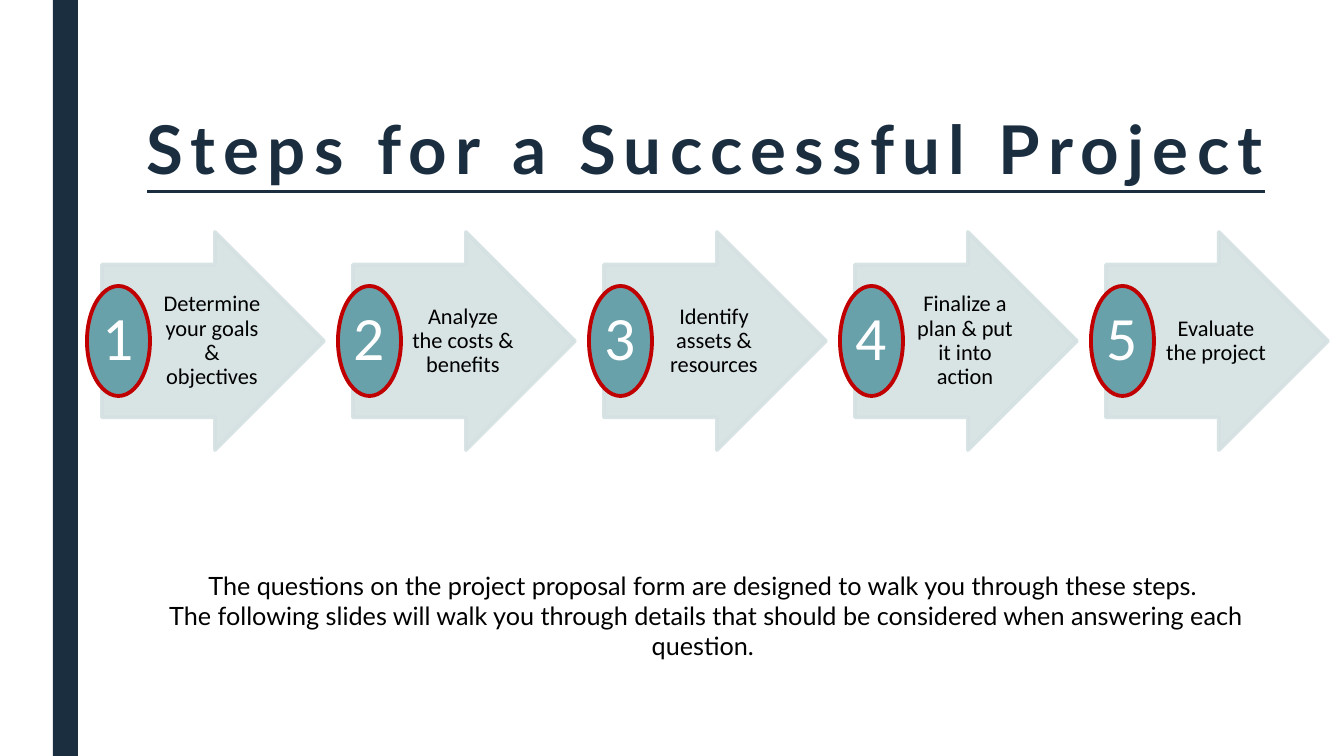
from pptx import Presentation
from pptx.dml.color import RGBColor
from pptx.enum.shapes import MSO_SHAPE
from pptx.enum.text import MSO_ANCHOR, PP_ALIGN
from pptx.oxml.ns import qn
from pptx.util import Emu, Pt
from lxml.etree import SubElement

PX = 914400 / 100.8
COLORS = {
    "navy": "1A2E40",
    "mist": "D4E0E2",
    "teal": "69A1AB",
    "red": "C00000",
    "black": "000000",
    "white": "FFFFFF",
}
STEPS = [
    "Determine your goals & objectives",
    "Analyze the costs & benefits",
    "Identify assets & resources",
    "Finalize a plan & put it into action",
    "Evaluate the project",
]
NOTES = [
    "The questions on the project proposal form are designed to walk you through these steps. ",
    "The following slides will walk you through details that should be considered "
    "when answering each question. ",
]
STEP_LEFT, STEP_PITCH = 102, 251


def px(n):
    return Emu(round(n * PX))


def rgb(name):
    return RGBColor.from_string(COLORS[name])


def set_alpha(fill_parent, percent):
    """Make the solid fill directly under an XML element partly transparent."""
    color = fill_parent.find(qn("a:solidFill"))[0]
    SubElement(color, qn("a:alpha"), val=str(percent * 1000))


def add_text(sp, lines, size, font="Calibri", color="black", bold=False, underline=False,
             spacing=None, line_spacing=None, anchor=MSO_ANCHOR.TOP, insets=(10, 5, 10, 5)):
    """Write centred paragraphs; insets are left, top, right, bottom in px."""
    tf = sp.text_frame
    tf.word_wrap = True
    tf.vertical_anchor = anchor
    tf.margin_left, tf.margin_top, tf.margin_right, tf.margin_bottom = map(px, insets)
    for i, line in enumerate(lines):
        p = tf.add_paragraph() if i else tf.paragraphs[0]
        p.alignment = PP_ALIGN.CENTER
        if line_spacing:
            p.line_spacing = line_spacing
        r = p.add_run()
        r.text = line
        r.font.name, r.font.size = font, Pt(size)
        r.font.bold, r.font.underline = bold, underline
        r.font.color.rgb = rgb(color)
        if spacing:
            r.font._element.set("spc", str(spacing * 100))


def add_box(s, kind, left, top, width, height, fill, line=None):
    sp = s.shapes.add_shape(kind, px(left), px(top), px(width), px(height))
    sp.shadow.inherit = False
    sp.fill.solid()
    sp.fill.fore_color.rgb = rgb(fill)
    if line:
        sp.line.color.rgb = rgb(line)
        sp.line.width = Pt(2.75)
    else:
        sp.line.fill.background()
    return sp


def add_textbox(s, left, top, width, height, lines, size, **style):
    sp = s.shapes.add_textbox(px(left), px(top), px(width), px(height))
    add_text(sp, lines, size, **style)


def add_step(s, left, number, label):
    arrow = add_box(s, MSO_SHAPE.RIGHT_ARROW, left, 232, 222, 218, "mist", "mist")
    arrow.adjustments[0] = 0.7
    arrow.adjustments[1] = 0.5
    set_alpha(arrow._element.spPr, 90)
    set_alpha(arrow.line._ln, 90)
    add_textbox(s, left + 55, 265, 108, 152, [label], 16, line_spacing=0.9,
                anchor=MSO_ANCHOR.MIDDLE, insets=(4, 1, 2, 1))

    badge = add_box(s, MSO_SHAPE.OVAL, left - 15, 286, 63, 110, "teal", "red")
    add_text(badge, [str(number)], 44, color="white", line_spacing=0.9,
             anchor=MSO_ANCHOR.MIDDLE, insets=(3, 3, 3, 3))


def main():
    prs = Presentation()
    prs.slide_width, prs.slide_height = px(1344), px(756)
    s = prs.slides.add_slide(prs.slide_layouts[6])

    add_box(s, MSO_SHAPE.RECTANGLE, 53, 0, 25, 756, "navy")
    for i, label in enumerate(STEPS):
        add_step(s, STEP_LEFT + i * STEP_PITCH, i + 1, label)
    add_textbox(s, 83, 112, 1246, 94, ["Steps for a Successful Project"], 48, font="Lato",
                color="navy", bold=True, underline=True, spacing=6, line_spacing=0.89)
    add_textbox(s, 124, 565, 1164, 72, NOTES, 18, font="Lato")

    prs.save("out.pptx")


if __name__ == "__main__":
    main()
